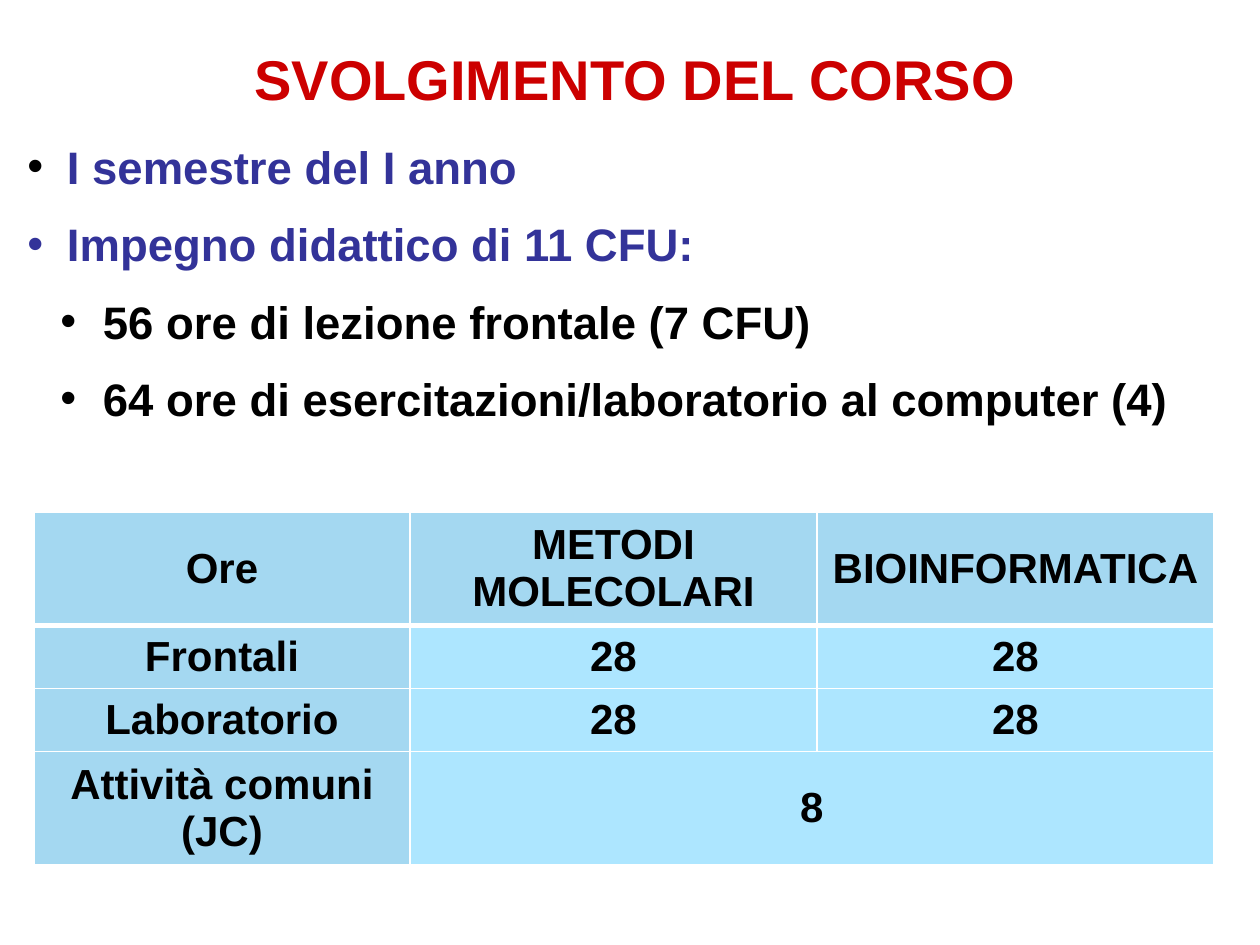
from pptx import Presentation
from pptx.dml.color import RGBColor
from pptx.enum.text import MSO_ANCHOR, PP_ALIGN
from pptx.oxml.ns import qn
from pptx.util import Pt
from lxml import etree

MID = MSO_ANCHOR.MIDDLE
TOP = MSO_ANCHOR.TOP
MITTE = PP_ALIGN.CENTER
SCALE = 914400 / 126
FONT = "Arial"
BLACK, WHITE, BLUE = "000000", "FFFFFF", "333399"
HEAD, CELL = "A4D8F1", "ADE6FF"

ITEMS = [
    (0, BLACK, [(" ", "528B13"), ("I semestre del I anno", BLUE)]),
    (0, BLUE, [(" Impegno didattico di 11 CFU:", BLUE)]),
    (1, BLACK, [(" 56 ore di lezione frontale (7 CFU)", BLACK)]),
    (1, BLACK, [(" 64 ore di esercitazioni/laboratorio al computer (4)", BLACK)]),
]
HANGS = [(27, 27), (63, 30)]
ROWS = [
    ["Ore", "METODI MOLECOLARI", "BIOINFORMATICA"],
    ["Frontali", "28", "28"],
    ["Laboratorio", "28", "28"],
    ["Attività comuni (JC)", "8", ""],
]
COLS = [376, 407, 397]
TALLS = [113, 63, 63, 113]


def px(num):
    """Turn pixels into EMU."""
    return round(num * SCALE)


def color(code):
    """Turn a hex string into a colour."""
    return RGBColor.from_string(code)


def add_run(para, text, size, code):
    """Add one bold run to a paragraph."""
    run = para.add_run()
    run.text = text
    font = run.font
    font.name, font.size, font.bold = FONT, Pt(size), True
    font.color.rgb = color(code)


def add_frame(slide, box, drop):
    """Add a wrapping text box whose text starts drop pixels down."""
    frame = slide.shapes.add_textbox(*map(px, box)).text_frame
    frame.word_wrap = True
    frame.vertical_anchor = TOP
    frame.margin_top = px(drop)
    return frame


def add_bullet(para, level, code):
    """Give a paragraph a hanging bullet."""
    left, hang = HANGS[level]
    para.level = level
    props = para._p.get_or_add_pPr()
    props.set("marL", str(px(left)))
    props.set("indent", str(-px(hang)))
    tint = etree.SubElement(props, qn("a:buClr"))
    etree.SubElement(tint, qn("a:srgbClr"), val=code)
    etree.SubElement(props, qn("a:buFont"), typeface=FONT)
    etree.SubElement(props, qn("a:buChar"), char="•")


def add_title(slide, box):
    """Place the centred heading."""
    para = add_frame(slide, box, 12).paragraphs[0]
    para.alignment = MITTE
    add_run(para, "SVOLGIMENTO DEL CORSO", 32, "CC0000")


def add_list(slide, box):
    """Place the bulleted list."""
    frame = add_frame(slide, box, 10)
    for num, (level, dot, runs) in enumerate(ITEMS):
        para = frame.add_paragraph() if num else frame.paragraphs[0]
        para.space_before, para.space_after = Pt(1), Pt(12)
        add_bullet(para, level, dot)
        for text, code in runs:
            add_run(para, text, 26, code)


def add_edges(cell, row):
    """Draw white cell borders, thicker under the header row."""
    props = cell._tc.get_or_add_tcPr()
    wide = {"L": 1, "R": 1, "T": 3 if row == 1 else 1, "B": 1 if row else 3}
    for num, (side, size) in enumerate(wide.items()):
        line = etree.Element(qn("a:ln" + side), w=str(Pt(size)))
        fill = etree.SubElement(line, qn("a:solidFill"))
        etree.SubElement(fill, qn("a:srgbClr"), val=WHITE)
        props.insert(num, line)


def add_hours(slide, box):
    """Place the table of hours."""
    table = slide.shapes.add_table(len(ROWS), len(COLS), *map(px, box)).table
    for col, wide in zip(table.columns, COLS):
        col.width = px(wide)
    for row, tall in zip(table.rows, TALLS):
        row.height = px(tall)
    for y, texts in enumerate(ROWS):
        for x, text in enumerate(texts):
            cell = table.cell(y, x)
            cell.vertical_anchor = MID
            cell.fill.solid()
            cell.fill.fore_color.rgb = color(CELL if x and y else HEAD)
            add_edges(cell, y)
            if text:
                para = cell.text_frame.paragraphs[0]
                para.alignment = MITTE
                add_run(para, text, 24, BLACK)
    table.cell(3, 1).merge(table.cell(3, 2))


def main():
    """Build and save the slide."""
    deck = Presentation()
    deck.slide_width, deck.slide_height = px(1260), px(945)
    slide = deck.slides.add_slide(deck.slide_layouts[6])
    add_title(slide, (5, 33, 1260, 102))
    add_list(slide, (15, 129, 1235, 832))
    add_hours(slide, (34, 512, sum(COLS), sum(TALLS)))
    deck.save("out.pptx")


if __name__ == "__main__":
    main()
